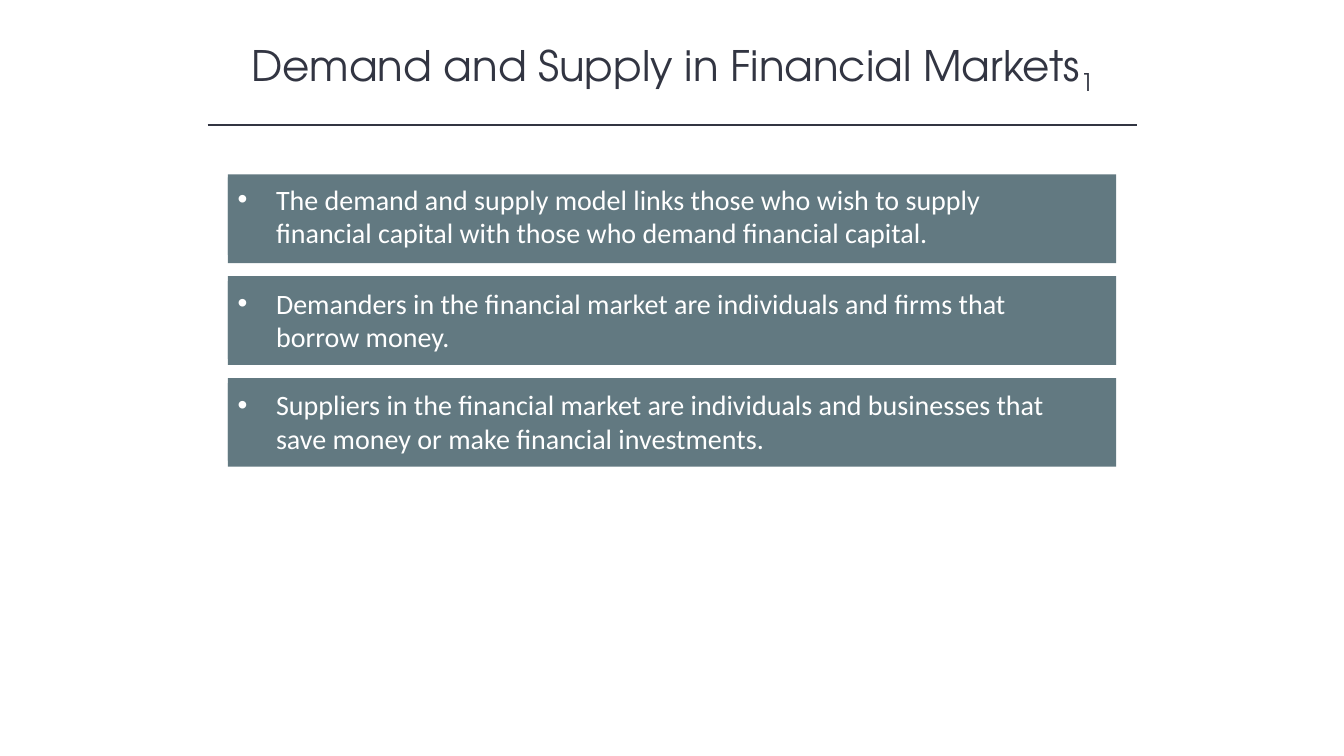
import pptx
import pptx.util
import pptx.dml.color
import pptx.enum.shapes
import pptx.enum.text
from lxml import etree
from pptx.oxml.ns import qn

Inches, Pt = pptx.util.Inches, pptx.util.Pt
PP_ALIGN = pptx.enum.text.PP_ALIGN
MSO_ANCHOR = pptx.enum.text.MSO_ANCHOR

COLORS = {"ink": "323542", "panel": "627981", "text": "FFFFFF"}
FONTS = {"title": "TeX Gyre Adventor", "body": "Calibri"}
POINTS = [
    ("The demand and supply model links those who wish to supply "
     "financial capital with those who demand financial capital.", 0.03),
    ("Demanders in the financial market are individuals and firms that "
     "borrow money.", 0.05),
    ("Suppliers in the financial market are individuals and businesses that "
     "save money or make financial investments.", 0.05),
]


class SlideBuilder:
    """Holds the style and the current slide, and adds each kind of element."""

    def __init__(self, prs):
        self.s = prs.slides.add_slide(prs.slide_layouts[5])

    def color(self, name):
        return pptx.dml.color.RGBColor.from_string(COLORS[name])

    def style(self, r, font, size, color):
        r.font.name = FONTS[font]
        r.font.size = Pt(size)
        r.font.color.rgb = self.color(color)

    def title(self, text, subscript):
        sp = self.s.shapes.title
        sp.left, sp.top = Inches(1.67), Inches(0.37)
        sp.width, sp.height = Inches(10), Inches(0.61)
        tf = sp.text_frame
        tf.word_wrap = True
        tf.auto_size = pptx.enum.text.MSO_AUTO_SIZE.NONE
        tf.vertical_anchor = MSO_ANCHOR.MIDDLE
        tf.text = text
        p = tf.paragraphs[0]
        p.alignment = PP_ALIGN.CENTER
        p.add_run().text = subscript
        for r in p.runs:
            self.style(r, "title", 30, "ink")
        p.runs[-1].font._element.set("baseline", "-25000")

    def rule(self, left, right, y):
        line = self.s.shapes.add_connector(
            pptx.enum.shapes.MSO_CONNECTOR.STRAIGHT,
            Inches(left), Inches(y), Inches(right), Inches(y))
        line.line.color.rgb = self.color("ink")
        line.line.width = Pt(1)
        etree.SubElement(line._element.spPr, qn("a:effectLst"))

    def box(self, shapes, left, top, width, height):
        sp = shapes.add_shape(
            pptx.enum.shapes.MSO_SHAPE.RECTANGLE,
            Inches(left), Inches(top), Inches(width), Inches(height))
        sp.shadow.inherit = False
        sp.fill.solid()
        sp.fill.fore_color.rgb = self.color("panel")
        sp.line.fill.background()
        return sp

    def card(self, text, top, inset):
        group = self.s.shapes.add_group_shape()
        self.box(group.shapes, 2.26, top, 8.81, 0.88)
        sp = self.box(group.shapes, 2.26, top + inset, 8.54, 0.77)
        tf = sp.text_frame
        tf.word_wrap = True
        tf.vertical_anchor = MSO_ANCHOR.TOP
        tf.text = text
        p = tf.paragraphs[0]
        p.alignment = PP_ALIGN.LEFT
        pPr = p._p.get_or_add_pPr()
        pPr.set("marL", str(Inches(0.38)))
        pPr.set("indent", str(-Inches(0.38)))
        etree.SubElement(pPr, qn("a:buFont")).set("typeface", "Arial")
        etree.SubElement(pPr, qn("a:buChar")).set("char", "•")
        self.style(p.runs[0], "body", 20, "text")


def main():
    prs = pptx.Presentation()
    prs.slide_width, prs.slide_height = Inches(13.33), Inches(7.5)
    slide = SlideBuilder(prs)
    slide.title("Demand and Supply in Financial Markets", "1")
    slide.rule(2.06, 11.28, 1.24)
    for i, (text, inset) in enumerate(POINTS):
        slide.card(text, 1.73 + 1.01 * i, inset)
    prs.save("out.pptx")


if __name__ == "__main__":
    main()
